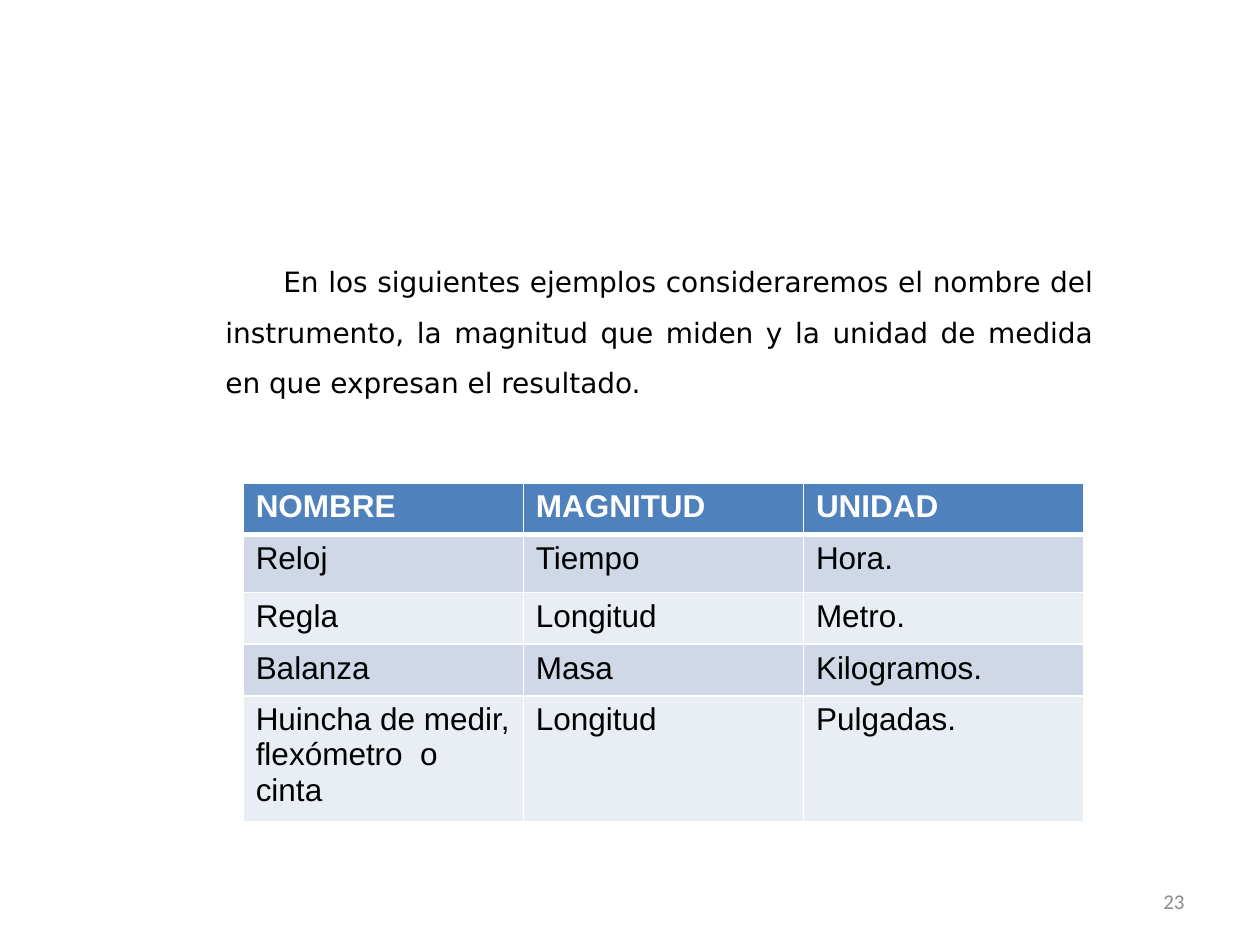
from lxml import etree
from pptx import Presentation
from pptx.dml.color import RGBColor
from pptx.enum.text import MSO_ANCHOR, PP_ALIGN
from pptx.oxml.ns import qn
from pptx.util import Emu, Inches, Pt

MIDDLE = MSO_ANCHOR.MIDDLE
RIGHT = PP_ALIGN.RIGHT
JUSTIFY = PP_ALIGN.JUSTIFY

SLIDE_WIDTH = Inches(10)
SLIDE_HEIGHT = Inches(7.5)
WHITE = "FFFFFF"
BLACK = "000000"
GRAY = "8C8C8C"
HEADER_BLUE = "4F81BD"
BANDS = ("E9EDF4", "D0D8E8")

INTRODUCTION = (
    "En los siguientes ejemplos consideraremos el nombre del instrumento, "
    "la magnitud que miden y la unidad de medida en que expresan el resultado."
)
INSTRUMENTS = [
    ("NOMBRE", "MAGNITUD", "UNIDAD"),
    ("Reloj", "Tiempo", "Hora."),
    ("Regla", "Longitud", "Metro."),
    ("Balanza", "Masa", "Kilogramos."),
    ("Huincha de medir, flexómetro  o cinta", "Longitud", "Pulgadas."),
]
ROW_HEIGHTS = (0.41, 0.46, 0.41, 0.41, 1)


def color(hex_string):
    return RGBColor.from_string(hex_string)


def place(left, top, width, height):
    return (
        Emu(int(SLIDE_WIDTH * left)),
        Emu(int(SLIDE_HEIGHT * top)),
        Emu(int(SLIDE_WIDTH * width)),
        Emu(int(SLIDE_HEIGHT * height)),
    )


def format_runs(paragraph, font_name, size, hex_string, bold=False):
    for run in paragraph.runs:
        run.font.name = font_name
        run.font.size = Pt(size)
        run.font.bold = bold
        run.font.color.rgb = color(hex_string)


def add_text(slide, box, text, alignment, font_name, size, hex_string):
    text_frame = slide.shapes.add_textbox(*box).text_frame
    text_frame.word_wrap = True
    text_frame.vertical_anchor = MIDDLE
    text_frame.text = text
    paragraph = text_frame.paragraphs[0]
    paragraph.alignment = alignment
    format_runs(paragraph, font_name, size, hex_string)
    return paragraph


def add_border(cell, side, points):
    properties = cell._tc.get_or_add_tcPr()
    line = etree.SubElement(properties, qn(f"a:ln{side}"), w=str(Pt(points)))
    fill = etree.SubElement(line, qn("a:solidFill"))
    etree.SubElement(fill, qn("a:srgbClr"), val=WHITE)


def format_cell(cell, text, row_index):
    is_header = row_index == 0
    widths = {
        "L": 1,
        "R": 1,
        "T": 3 if row_index == 1 else 1,
        "B": 3 if is_header else 1,
    }
    for side, points in widths.items():
        add_border(cell, side, points)
    cell.fill.solid()
    cell.fill.fore_color.rgb = color(HEADER_BLUE if is_header else BANDS[row_index % 2])
    cell.text_frame.text = text
    format_runs(
        cell.text_frame.paragraphs[0],
        "Arial",
        18,
        WHITE if is_header else BLACK,
        is_header,
    )


def add_instrument_table(slide, box):
    shape = slide.shapes.add_table(len(INSTRUMENTS), len(INSTRUMENTS[0]), *box)
    table = shape.table
    for row_index, (height, texts) in enumerate(zip(ROW_HEIGHTS, INSTRUMENTS)):
        table.rows[row_index].height = Inches(height)
        for column_index, text in enumerate(texts):
            format_cell(table.cell(row_index, column_index), text, row_index)


def main():
    presentation = Presentation()
    presentation.slide_width = SLIDE_WIDTH
    presentation.slide_height = SLIDE_HEIGHT
    slide = presentation.slides.add_slide(presentation.slide_layouts[6])

    add_text(slide, place(0.717, 0.927, 0.233, 0.053), "23", RIGHT, "Calibri", 12, GRAY)
    introduction = add_text(
        slide, place(0.169, 0.255, 0.709, 0.175), INTRODUCTION, JUSTIFY, "DejaVu Sans", 16, BLACK
    )
    introduction.line_spacing = 1.5
    introduction._p.get_or_add_pPr().set("indent", str(Inches(0.46)))
    add_instrument_table(slide, place(0.193, 0.511, 0.667, 0.359))

    presentation.save("out.pptx")


if __name__ == "__main__":
    main()
